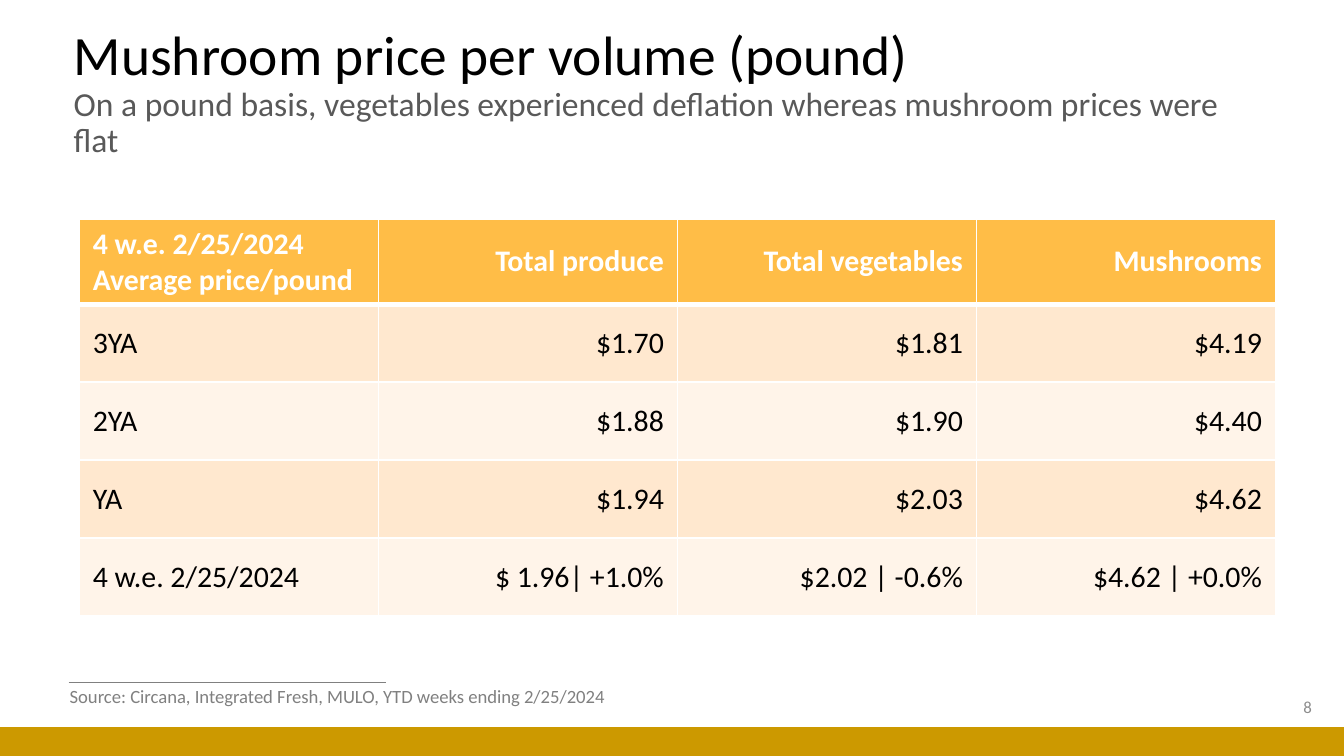
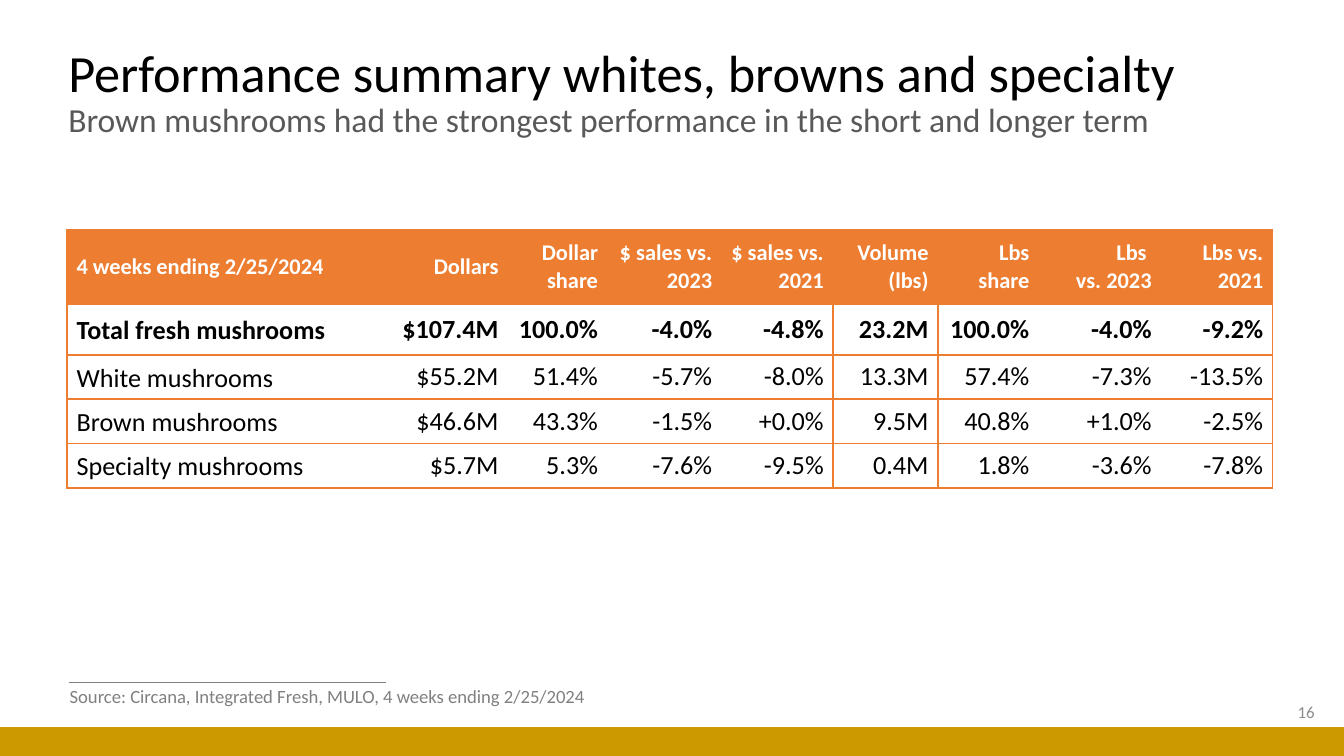
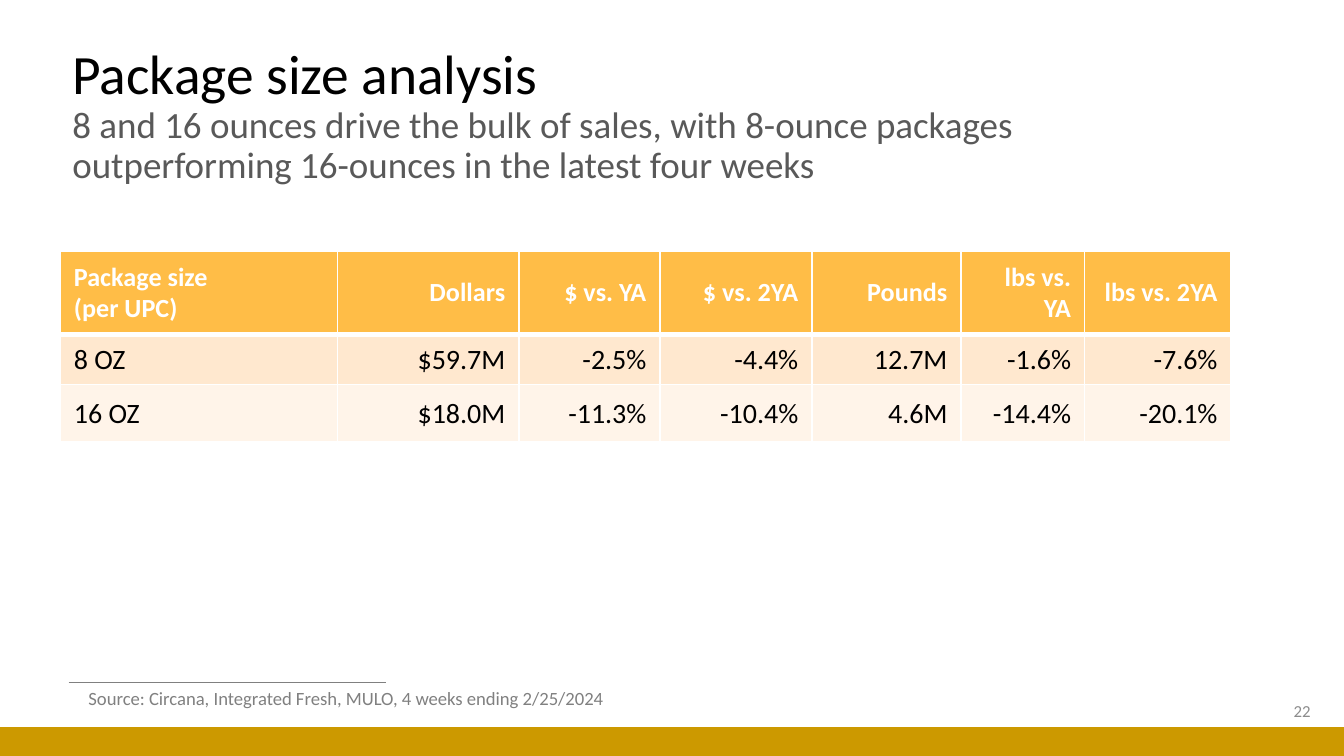
from lxml.etree import SubElement
from pptx import Presentation
from pptx.dml.color import RGBColor
from pptx.enum.shapes import MSO_CONNECTOR, MSO_SHAPE
from pptx.enum.text import MSO_ANCHOR, PP_ALIGN
from pptx.oxml.ns import qn
from pptx.util import Inches, Pt

FONT = "Calibri"
WHITE = RGBColor(0xFF, 0xFF, 0xFF)
BLACK = RGBColor(0, 0, 0)
SLATE = RGBColor(0x59, 0x59, 0x59)
GRAY = RGBColor(0x80, 0x80, 0x80)
SILVER = RGBColor(0x8C, 0x8C, 0x8C)
GOLD = RGBColor(0xCC, 0x99, 0x00)
AMBER = RGBColor(0xFF, 0xBD, 0x47)
PEACH = RGBColor(0xFF, 0xE8, 0xCF)
CREAM = RGBColor(0xFF, 0xF4, 0xE9)
ORANGE = RGBColor(0xED, 0x7D, 0x31)
PLAIN = "{2D5ABB26-0587-4C30-8999-92F81FD0307C}"

deck = Presentation()
deck.slide_width = Inches(10)
deck.slide_height = Inches(5.625)
UNIT = deck.slide_width // 100
BASE = 54.1

PAGES = [
    {
        "title": "Mushroom price per volume (pound)",
        "lead": "On a pound basis, vegetables experienced deflation whereas mushroom prices were flat",
        "box": (4.5, 2.2, 87.4, 9.5), "sizes": (29.7, 18),
        "page": "8", "spot": (76.1, 51.1),
        "source": "Source: Circana, Integrated Fresh, MULO, YTD weeks ending 2/25/2024",
        "note": (4.2, 50.5, 43.1, 2.7),
        "at": (5.9, 16.3), "cols": [22.25] * 4, "rows": [5.9] + [5.8] * 4,
        "fonts": (16, 16), "pads": ((1, 0.5, 0.5), (1, 0.5, 0.5)),
        "boxed": False,
        "cells": [
            ["4 w.e. 2/25/2024\nAverage price/pound", "Total produce", "Total vegetables", "Mushrooms"],
            ["3YA", "$1.70", "$1.81", "$4.19"],
            ["2YA", "$1.88", "$1.90", "$4.40"],
            ["YA", "$1.94", "$2.03", "$4.62"],
            ["4 w.e. 2/25/2024", "$ 1.96| +1.0%", "$2.02 | -0.6%", "$4.62 | +0.0%"],
        ],
    },
    {
        "title": "Performance summary whites, browns and specialty",
        "lead": "Brown mushrooms had the strongest performance in the short and longer term",
        "box": (4.1, 3, 93.7, 7.9), "sizes": (28, 18),
        "page": "16", "spot": (76.3, 51.5),
        "source": "Source: Circana, Integrated Fresh, MULO, 4 weeks ending 2/25/2024",
        "note": (4.2, 50.5, 41.8, 2.7),
        "at": (5, 17.1), "cols": [23.7, 9.1, 7.4, 8.5, 8.3, 7.8, 7.5, 9.1, 8.3],
        "rows": [5.5, 3.8, 3.3, 3.3, 3.3],
        "fonts": (12, 14), "pads": ((0.7, 0, 0), (0.7, 0, 0)),
        "boxed": True,
        "cells": [
            ["4 weeks ending 2/25/2024", "Dollars", "Dollar share", "$ sales vs. 2023", "$ sales vs. 2021",
             "Volume (lbs)", "Lbs\nshare", "Lbs \vvs. 2023", "Lbs vs. 2021"],
            ["Total fresh mushrooms", "$107.4M", "100.0%", "-4.0%", "-4.8%", "23.2M", "100.0%", "-4.0%", "-9.2%"],
            ["White mushrooms", "$55.2M", "51.4%", "-5.7%", "-8.0%", "13.3M", "57.4%", "-7.3%", "-13.5%"],
            ["Brown mushrooms", "$46.6M", "43.3%", "-1.5%", "+0.0%", "9.5M", "40.8%", "+1.0%", "-2.5%"],
            ["Specialty mushrooms", "$5.7M", "5.3%", "-7.6%", "-9.5%", "0.4M", "1.8%", "-3.6%", "-7.8%"],
        ],
    },
    {
        "title": "Package size analysis",
        "lead": "8 and 16 ounces drive the bulk of sales, with 8-ounce packages outperforming 16-ounces in the latest four weeks",
        "box": (4.4, 3.4, 85.3, 10.6), "sizes": (29.7, 19.8),
        "page": "22", "spot": (76, 51.4),
        "source": "Source: Circana, Integrated Fresh, MULO, 4 weeks ending 2/25/2024",
        "note": (5.6, 50.6, 41.8, 2.7),
        "at": (4.5, 18.7), "cols": [20.6, 13.5, 10.5, 11.3, 11.1, 9.2, 10.9],
        "rows": [6.2, 3.7, 4.3],
        "fonts": (14, 15), "pads": ((1, 0.5, 0.5), (1, 0.1, 0)),
        "boxed": False,
        "cells": [
            ["Package size \v(per UPC)", "Dollars", "$ vs. YA", "$ vs. 2YA", "Pounds", "lbs vs. YA", "lbs vs. 2YA"],
            ["8 OZ", "$59.7M", "-2.5%", "-4.4%", "12.7M", "-1.6%", "-7.6%"],
            ["16 OZ", "$18.0M", "-11.3%", "-10.4%", "4.6M", "-14.4%", "-20.1%"],
        ],
    },
]


def write(slide, box, text, styles, wrap=True):
    frame = slide.shapes.add_textbox(*(round(n * UNIT) for n in box)).text_frame
    frame.text = text
    frame.word_wrap = wrap
    for run, (size, color) in zip(frame.paragraphs[0].runs, styles):
        run.font.name = FONT
        run.font.size = Pt(size)
        run.font.color.rgb = color
    return frame


def edge(cell, side, color, width):
    line = SubElement(cell._tc.get_or_add_tcPr(), qn("a:ln" + side), w=str(Pt(width)))
    fill = SubElement(line, qn("a:solidFill"))
    SubElement(fill, qn("a:srgbClr"), val=str(color))


for page in PAGES:
    slide = deck.slides.add_slide(deck.slide_layouts[6])

    y = round(50.8 * UNIT)
    rule = slide.shapes.add_connector(
        MSO_CONNECTOR.STRAIGHT, round(5.1 * UNIT), y, round(28.7 * UNIT), y)
    rule.line.color.rgb = GRAY
    rule.line.width = Pt(0.5)
    SubElement(rule._element.spPr, qn("a:effectLst"))

    top = round(BASE * UNIT)
    band = slide.shapes.add_shape(
        MSO_SHAPE.RECTANGLE, 0, top, deck.slide_width, deck.slide_height - top)
    band.shadow.inherit = False
    band.fill.solid()
    band.fill.fore_color.rgb = GOLD
    band.line.fill.background()

    big, small = page["sizes"]
    head = write(slide, page["box"], page["title"] + "\v" + page["lead"],
                 [(big, BLACK), (small, SLATE)])
    head.vertical_anchor = MSO_ANCHOR.MIDDLE
    head.paragraphs[0].line_spacing = 0.9

    num = write(slide, (*page["spot"], 22.5, 3), page["page"], [(9, SILVER)])
    num.vertical_anchor = MSO_ANCHOR.MIDDLE
    num.paragraphs[0].alignment = PP_ALIGN.RIGHT
    write(slide, page["note"], page["source"], [(10, GRAY)], wrap=False)

    cols, rows, boxed = page["cols"], page["rows"], page["boxed"]
    area = (*page["at"], sum(cols), sum(rows))
    table = slide.shapes.add_table(
        len(rows), len(cols), *(round(n * UNIT) for n in area)).table
    table._tbl.tblPr.find(qn("a:tableStyleId")).text = PLAIN
    table.first_row = True
    table.horz_banding = False
    for col, width in zip(table.columns, cols):
        col.width = round(width * UNIT)
    for row, height in zip(table.rows, rows):
        row.height = round(height * UNIT)

    for r, texts in enumerate(page["cells"]):
        top = r == 0
        side, above, below = page["pads"][not top]
        for c, text in enumerate(texts):
            cell = table.cell(r, c)
            if boxed:
                sides = ("L" if c in (0, 5) else "") + ("R" if c in (4, 8) else "") + "TB"
            else:
                sides = "LRTB"
            for mark in sides:
                heavy = not boxed and (top and mark == "B" or r == 1 and mark == "T")
                edge(cell, mark, ORANGE if boxed else WHITE, 3 if heavy else 1)
            if boxed and not top:
                cell.fill.background()
            else:
                cell.fill.solid()
                shade = ORANGE if boxed else AMBER
                cell.fill.fore_color.rgb = shade if top else (CREAM, PEACH)[r % 2]
            cell.margin_left = cell.margin_right = round(side * UNIT)
            cell.margin_top = round(above * UNIT)
            cell.margin_bottom = round(below * UNIT)
            cell.vertical_anchor = MSO_ANCHOR.MIDDLE
            cell.text_frame.text = text
            for para in cell.text_frame.paragraphs:
                para.alignment = PP_ALIGN.RIGHT if c else PP_ALIGN.LEFT
                if boxed and not top and c == 0:
                    para.line_spacing = 1.07
                for run in para.runs:
                    run.font.name = FONT
                    run.font.size = Pt(page["fonts"][not top])
                    run.font.bold = top or boxed and r == 1
                    run.font.color.rgb = WHITE if top else BLACK

deck.save("out.pptx")
